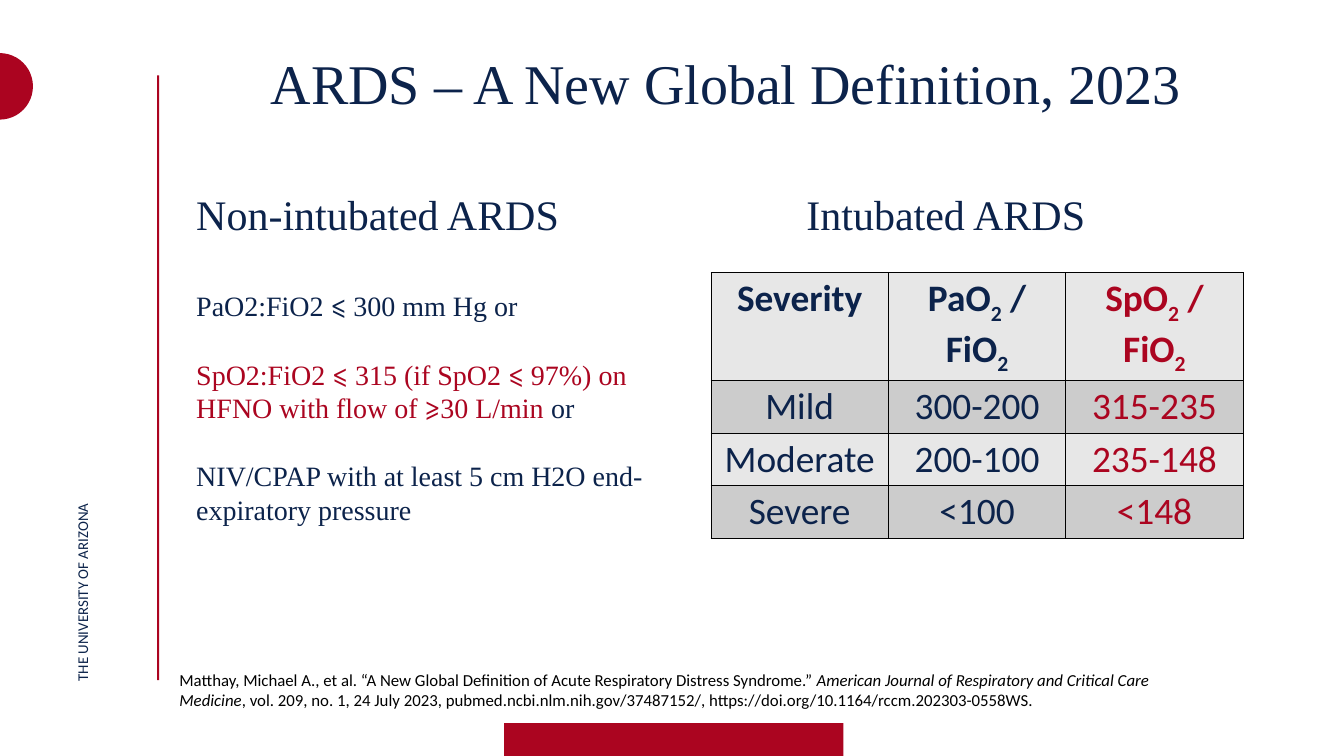
"""Build the ARDS 2023 global definition slide."""
from lxml.etree import SubElement
from pptx import Presentation
from pptx.dml.color import RGBColor
from pptx.enum.shapes import MSO_SHAPE as Shape
from pptx.enum.text import MSO_ANCHOR as Anchor, MSO_AUTO_SIZE as AutoSize, PP_ALIGN as Align
from pptx.oxml.ns import qn
from pptx.util import Inches, Pt

COLORS = {"navy": "0C234B", "side": "0C234A", "red": "AB0520", "mark": "AB0420",
          "black": "000000", "light": "E7E7E7", "dark": "CCCCCC"}
SERIF, SANS = "Times New Roman", "Calibri"

deck = Presentation()
deck.slide_width, deck.slide_height = Inches(20), Inches(11.25)
slide = deck.slides.add_slide(deck.slide_layouts[3])


def share(left, top, width, height):
    """Turn percentages of the slide into lengths."""
    across, down = deck.slide_width / 100, deck.slide_height / 100
    return int(left * across), int(top * down), int(width * across), int(height * down)


def write(paragraph, parts, size, font, color, bold=False, align=Align.LEFT, before=0):
    """Fill a paragraph with (text, emphasis) parts."""
    properties = paragraph._p.get_or_add_pPr()
    properties.set("marL", "0")
    properties.set("indent", "0")
    SubElement(properties, qn("a:buNone"))
    paragraph.alignment, paragraph.space_before = align, Pt(before)
    paragraph.font.size, paragraph.font.name, paragraph.font.bold = Pt(size), font, bold
    paragraph.font.color.rgb = RGBColor.from_string(COLORS[color])
    for text, emphasis in parts:
        run = paragraph.add_run()
        run.text = text
        if emphasis == "italic":
            run.font.italic = True
        elif emphasis == "sub":
            run._r.get_or_add_rPr().set("baseline", "-25000")
        elif emphasis:
            run.font.color.rgb = RGBColor.from_string(COLORS[emphasis])


for preset, area, color in [
    (Shape.OVAL, (-2.5, 7.02, 4.95, 8.8), "mark"),
    (Shape.RECTANGLE, (11.7, 9.96, 0.15, 80), "mark"),
    (Shape.RECTANGLE, (37.5, 95.64, 25.25, 4.8), "red"),
]:
    ornament = slide.shapes.add_shape(preset, *share(*area))
    ornament.shadow.inherit = False
    ornament.fill.solid()
    ornament.fill.fore_color.rgb = RGBColor.from_string(COLORS[color])
    ornament.line.fill.background()

title, non_intubated, intubated = slide.placeholders
citation = slide.shapes.add_textbox(0, 0, 0, 0)
university = slide.shapes.add_textbox(0, 0, 0, 0)
for holder, area in [
    (title, (20.15, 6.31, 75.3, 15.29)),
    (non_intubated, (14.6, 24.8, 37.1, 7.11)),
    (intubated, (60, 24.8, 29.55, 7.11)),
    (citation, (13.35, 88.53, 73.85, 7.11)),
    (university, (5.45, 34.49, 1.35, 55.64)),
]:
    holder.left, holder.top, holder.width, holder.height = share(*area)
    frame = holder.text_frame
    frame.margin_left = frame.margin_right = frame.margin_bottom = 0
    frame.margin_top = Inches(0.01)
    frame.word_wrap, frame.auto_size = True, AutoSize.NONE
    frame.vertical_anchor = Anchor.TOP
university.text_frame._txBody.bodyPr.set("vert", "vert270")

for holder, parts, size, font, color in [
    (title, [("ARDS – A New Global Definition, 2023", None)], 60, SERIF, "navy"),
    (non_intubated, [("Non-intubated ARDS", None)], 45, SERIF, "navy"),
    (intubated, [("Intubated ARDS", None)], 45, SERIF, "navy"),
    (university, [("THE UNIVERSITY OF ARIZONA", None)], 16, SANS, "side"),
    (citation, [
        ("Matthay, Michael A., et al. “A New Global Definition of Acute Respiratory "
         "Distress Syndrome.” ", None),
        ("American Journal of Respiratory and Critical Care Medicine", "italic"),
        (", vol. 209, no. 1, 24 July 2023, pubmed.ncbi.nlm.nih.gov/37487152/, "
         "https://doi.org/10.1164/rccm.202303-0558WS.", None),
    ], 18, SANS, "black"),
]:
    write(holder.text_frame.paragraphs[0], parts, size, font, color)

for before, parts in [
    (54, [("PaO2:FiO2 ⩽ 300 mm Hg or", None)]),
    (37, [("SpO2:FiO2 ⩽ 315 (if SpO2 ⩽ 97%) on HFNO with flow of ⩾30 L/min", "red"),
          (" or", None)]),
    (37, [("NIV/CPAP with at least 5 cm H2O end-expiratory pressure", None)]),
]:
    write(non_intubated.text_frame.add_paragraph(), parts, 30, SERIF, "navy", before=before)

severity_rows = [
    [["Severity"], ["PaO", "2", " / FiO", "2"], ["SpO", "2", " / FiO", "2"]],
    [["Mild"], ["300-200"], ["315-235"]],
    [["Moderate"], ["200-100"], ["235-148"]],
    [["Severe"], ["<100"], ["<148"]],
]
severity = slide.shapes.add_table(4, 3, *share(52.9, 36.09, 39.6, 33.16)).table
for row, entries in enumerate(severity_rows):
    severity.rows[row].height = Inches(0.78 if row else 1.39)
    for column, entry in enumerate(entries):
        cell = severity.cell(row, column)
        borders = cell._tc.get_or_add_tcPr()
        for side in ("lnL", "lnR", "lnT", "lnB"):
            border = SubElement(borders, qn(f"a:{side}"), w=str(Pt(1)))
            SubElement(SubElement(border, qn("a:solidFill")), qn("a:srgbClr"), val=COLORS["black"])
        cell.fill.solid()
        cell.fill.fore_color.rgb = RGBColor.from_string(COLORS["dark" if row % 2 else "light"])
        parts = [(text, "sub" if text == "2" else None) for text in entry]
        write(cell.text_frame.paragraphs[0], parts, 40, SANS, "red" if column == 2 else "navy",
              bold=row == 0, align=Align.CENTER)

deck.save("out.pptx")
